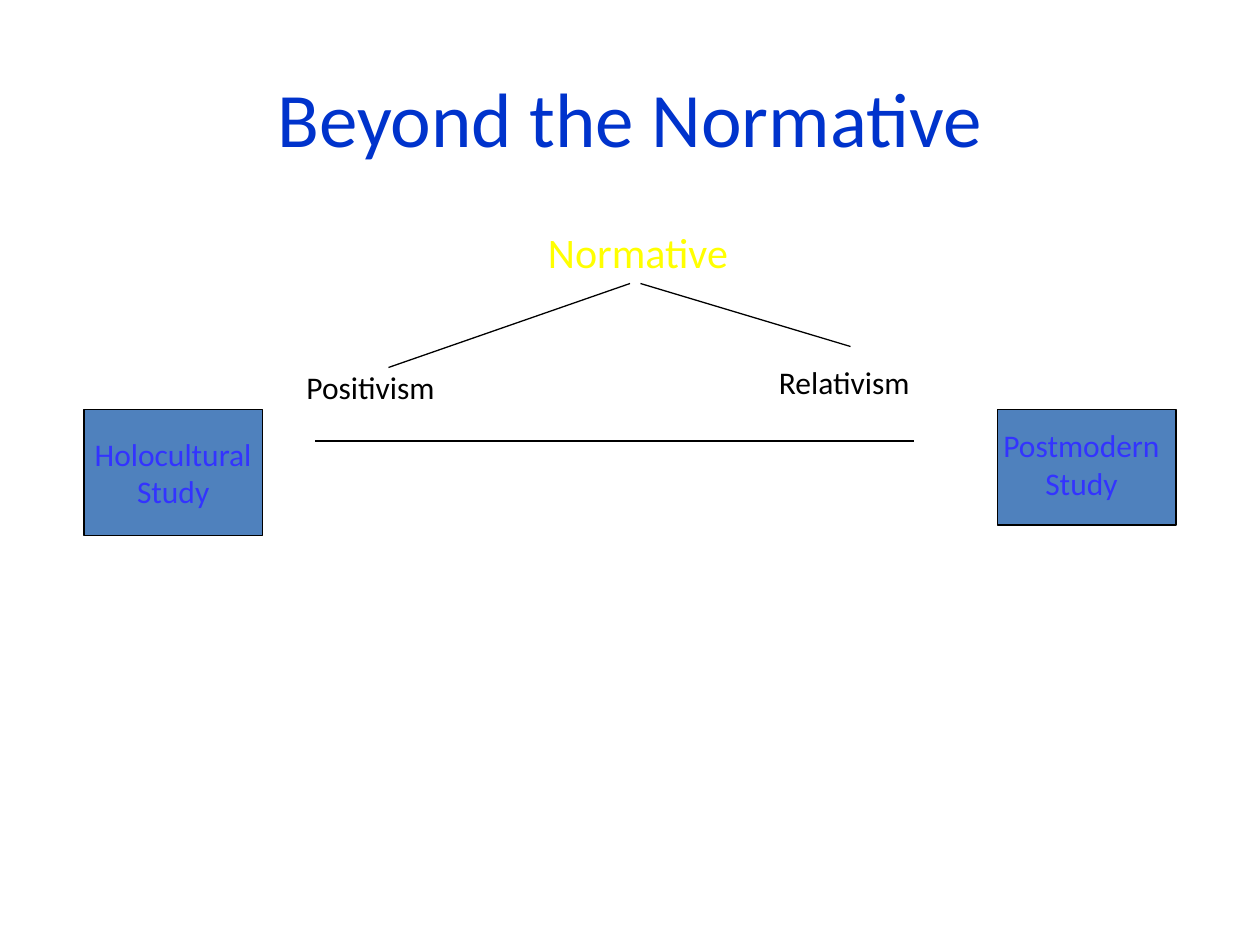
from dataclasses import dataclass

from lxml.etree import SubElement
from pptx import Presentation
from pptx.dml.color import RGBColor
from pptx.enum.shapes import MSO_CONNECTOR, MSO_SHAPE
from pptx.enum.text import MSO_ANCHOR, PP_ALIGN
from pptx.oxml.ns import qn
from pptx.slide import Slide
from pptx.text.text import TextFrame
from pptx.util import Pt

FONT = "Calibri"
TITLE_BLUE = RGBColor(0x00, 0x33, 0xCC)
STUDY_BLUE = RGBColor(0x33, 0x33, 0xFF)
BOX_BLUE = RGBColor(0x4F, 0x81, 0xBD)
YELLOW = RGBColor(0xFF, 0xFF, 0x00)
BLACK = RGBColor(0x00, 0x00, 0x00)
LINE_WIDTH = Pt(0.75)


@dataclass(frozen=True)
class Area:
    left: float
    top: float
    width: float
    height: float

    def lengths(self) -> tuple[Pt, Pt, Pt, Pt]:
        return Pt(self.left), Pt(self.top), Pt(self.width), Pt(self.height)


@dataclass(frozen=True)
class Label:
    lines: tuple[str, ...]
    size: float = 18
    color: RGBColor = BLACK
    align: PP_ALIGN = PP_ALIGN.LEFT
    anchor: MSO_ANCHOR = MSO_ANCHOR.TOP
    wrap: bool = True


@dataclass(frozen=True)
class Link:
    start: tuple[float, float]
    end: tuple[float, float]


def write_label(frame: TextFrame, label: Label) -> None:
    frame.word_wrap = label.wrap
    frame.vertical_anchor = label.anchor
    for index, line in enumerate(label.lines):
        paragraph = frame.add_paragraph() if index else frame.paragraphs[0]
        paragraph.alignment = label.align
        run = paragraph.add_run()
        run.text = line
        run.font.name = FONT
        run.font.size = Pt(label.size)
        run.font.color.rgb = label.color


def add_label(slide: Slide, area: Area, label: Label) -> None:
    write_label(slide.shapes.add_textbox(*area.lengths()).text_frame, label)


def add_box(slide: Slide, area: Area, label: Label | None = None) -> None:
    box = slide.shapes.add_shape(MSO_SHAPE.RECTANGLE, *area.lengths())
    box.shadow.inherit = False
    box.fill.solid()
    box.fill.fore_color.rgb = BOX_BLUE
    box.line.color.rgb = BLACK
    box.line.width = LINE_WIDTH
    if label:
        write_label(box.text_frame, label)


def add_link(slide: Slide, link: Link) -> None:
    ends = (Pt(value) for value in (*link.start, *link.end))
    connector = slide.shapes.add_connector(MSO_CONNECTOR.STRAIGHT, *ends)
    connector.line.color.rgb = BLACK
    connector.line.width = LINE_WIDTH
    SubElement(connector._element.spPr, qn("a:effectLst"))


TITLE = Label(("Beyond the Normative",), 44, TITLE_BLUE, PP_ALIGN.CENTER, MSO_ANCHOR.MIDDLE)
HOLOCULTURAL = Label(
    ("Holocultural", "Study"), 18, STUDY_BLUE, PP_ALIGN.CENTER, MSO_ANCHOR.MIDDLE, wrap=False
)
POSTMODERN = Label(("Postmodern", "Study"), 18, STUDY_BLUE, PP_ALIGN.CENTER)

LABELS = (
    (Area(36, 21.6, 648, 90), TITLE),
    (Area(168, 206.5, 126, 29), Label(("Positivism",))),
    (Area(438, 204, 96, 29), Label(("Relativism",))),
    (Area(306, 126, 132, 36), Label(("Normative",), 24, YELLOW)),
)
LINKS = (
    Link((180, 252), (522, 252)),
    Link((222, 210), (360, 162)),
    Link((486, 198), (366, 162)),
)


def main() -> None:
    deck = Presentation()
    deck.slide_width, deck.slide_height = Pt(720), Pt(540)
    slide = deck.slides.add_slide(deck.slide_layouts[6])
    for area, label in LABELS:
        add_label(slide, area, label)
    for link in LINKS:
        add_link(slide, link)
    add_box(slide, Area(48, 234, 102, 72), HOLOCULTURAL)
    add_box(slide, Area(570, 234, 102, 66))
    add_label(slide, Area(558, 240, 120, 50), POSTMODERN)
    deck.save("out.pptx")


if __name__ == "__main__":
    main()
